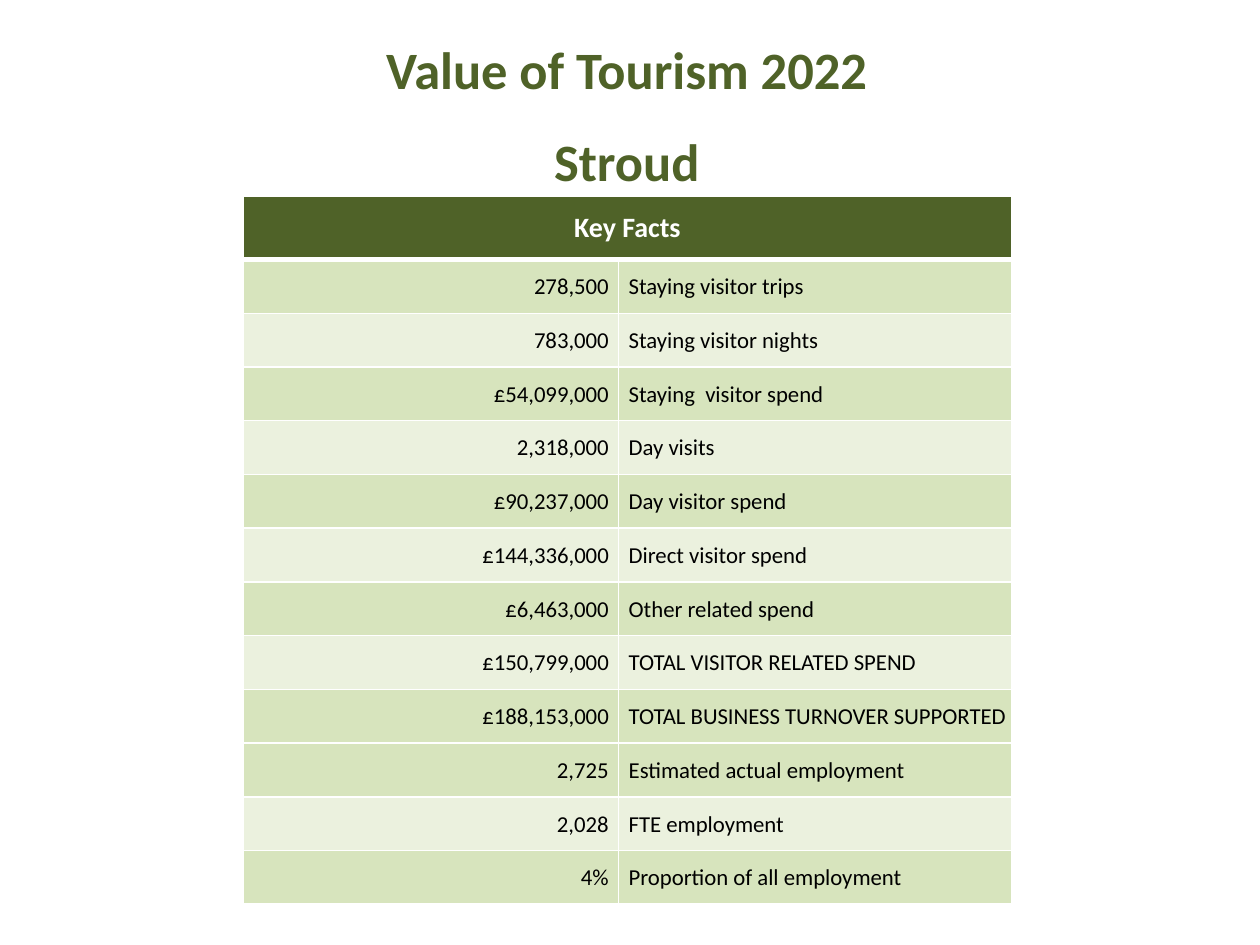
from lxml.etree import SubElement
from pptx import Presentation
from pptx.dml.color import RGBColor
from pptx.enum.text import MSO_ANCHOR, MSO_AUTO_SIZE, PP_ALIGN
from pptx.oxml.ns import qn
from pptx.util import Inches, Pt

TITLE = ["Value of Tourism 2022", "Stroud"]
HEADING = "Key Facts"
# The row banding starts again with each group.
FACT_GROUPS = [
    [
        ("278,500", "Staying visitor trips"),
        ("783,000", "Staying visitor nights"),
        ("£54,099,000", "Staying  visitor spend"),
        ("2,318,000", "Day visits"),
        ("£90,237,000", "Day visitor spend"),
        ("£144,336,000", "Direct visitor spend"),
        ("£6,463,000", "Other related spend"),
        ("£150,799,000", "TOTAL VISITOR RELATED SPEND"),
        ("£188,153,000", "TOTAL BUSINESS TURNOVER SUPPORTED"),
    ],
    [
        ("2,725", "Estimated actual employment"),
        ("2,028", "FTE employment"),
        ("4%", "Proportion of all employment"),
    ],
]

THEME = {
    "font": "Calibri",
    "green": "4F6228",
    "bands": ("D7E4BD", "EBF1DE"),
    "white": "FFFFFF",
    "black": "000000",
    "title": 30,
    "heading": 16,
    "body": 13,
}
TITLE_BOX = (1.39, 0.24, 7.17, 1.35)
TITLE_GAP = 17
TABLE_BOX = (1.93, 1.56, 6.1, 5.62)
COLUMN_WIDTHS = (2.98, 3.12)
HEADING_HEIGHT = 0.5
VALUE_INSETS = (0.01, 0.01, 0.08, 0)
LABEL_INSETS = (0.08, 0.01, 0.01, 0)
RULE, HEADING_RULE = 1, 3


def style_para(para, size, color, align, bold=False):
    para.alignment = align
    font = para.font
    font.name, font.size, font.bold = THEME["font"], Pt(size), bold
    font.color.rgb = RGBColor.from_string(color)


def set_borders(cell, top=RULE, bottom=RULE):
    props = cell._tc.get_or_add_tcPr()
    widths = {"a:lnL": RULE, "a:lnR": RULE, "a:lnT": top, "a:lnB": bottom}
    for tag, width in widths.items():
        line = SubElement(props, qn(tag), w=str(Pt(width)))
        fill = SubElement(line, qn("a:solidFill"))
        SubElement(fill, qn("a:srgbClr"), val=THEME["white"])


def fill_cell(cell, text, fill, size, color, align, bold=False, insets=None):
    cell.text = text
    cell.vertical_anchor = MSO_ANCHOR.MIDDLE
    style_para(cell.text_frame.paragraphs[0], size, color, align, bold)
    if insets:
        (cell.margin_left, cell.margin_top,
         cell.margin_right, cell.margin_bottom) = map(Inches, insets)
    cell.fill.solid()
    cell.fill.fore_color.rgb = RGBColor.from_string(fill)


def add_title(page):
    box = page.shapes.title
    box.left, box.top, box.width, box.height = map(Inches, TITLE_BOX)
    frame = box.text_frame
    frame.text = "\n".join(TITLE)
    frame.word_wrap = True
    frame.auto_size = MSO_AUTO_SIZE.NONE
    frame.vertical_anchor = MSO_ANCHOR.TOP
    for para in frame.paragraphs:
        style_para(para, THEME["title"], THEME["green"], PP_ALIGN.CENTER, True)
    frame.paragraphs[-1].space_before = Pt(TITLE_GAP)


def add_facts(page):
    facts = [(fact, THEME["bands"][index % 2])
             for group in FACT_GROUPS for index, fact in enumerate(group)]
    table = page.shapes.add_table(
        len(facts) + 1, len(COLUMN_WIDTHS), *map(Inches, TABLE_BOX)).table
    for column, width in zip(table.columns, COLUMN_WIDTHS):
        column.width = Inches(width)
    fact_height = (TABLE_BOX[3] - HEADING_HEIGHT) / len(facts)
    for index, row in enumerate(table.rows):
        row.height = Inches(fact_height if index else HEADING_HEIGHT)

    for cell in table.rows[0].cells:
        set_borders(cell, bottom=HEADING_RULE)
    table.cell(0, 0).merge(table.cell(0, 1))
    fill_cell(table.cell(0, 0), HEADING, THEME["green"], THEME["heading"],
              THEME["white"], PP_ALIGN.CENTER, True)

    columns = ((PP_ALIGN.RIGHT, VALUE_INSETS), (PP_ALIGN.LEFT, LABEL_INSETS))
    for row, (fact, band) in enumerate(facts, start=1):
        for col, (text, (align, insets)) in enumerate(zip(fact, columns)):
            cell = table.cell(row, col)
            set_borders(cell, top=HEADING_RULE if row == 1 else RULE)
            fill_cell(cell, text, band, THEME["body"], THEME["black"],
                      align, insets=insets)


def main():
    deck = Presentation()
    deck.slide_width, deck.slide_height = Inches(10), Inches(7.5)
    page = deck.slides.add_slide(deck.slide_layouts.get_by_name("Title Only"))
    add_title(page)
    add_facts(page)
    deck.save("out.pptx")


if __name__ == "__main__":
    main()
